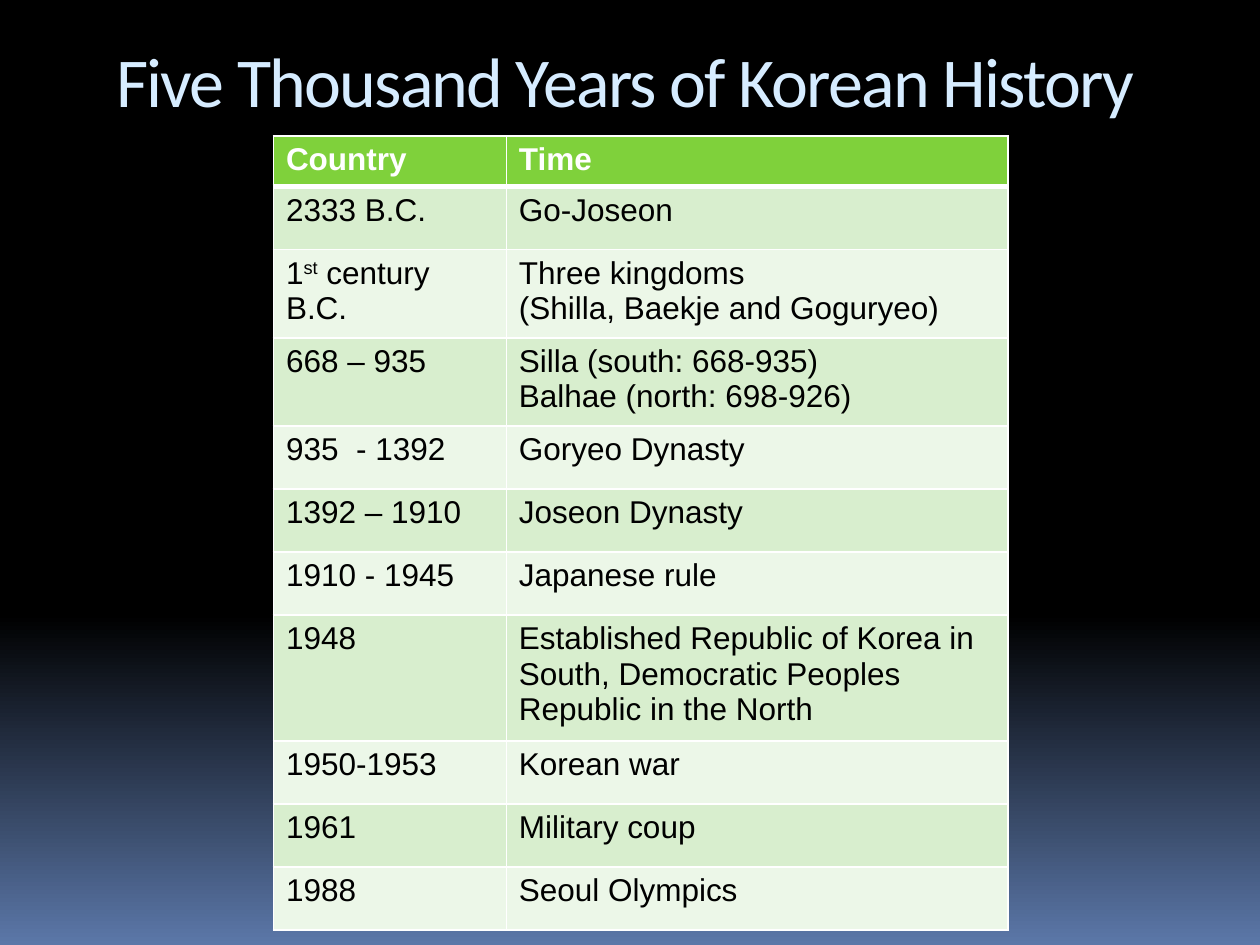
import dataclasses

import lxml.etree
import pptx
import pptx.dml.color
import pptx.enum.text
import pptx.oxml.ns
import pptx.util


@dataclasses.dataclass(frozen=True)
class Theme:
    sky_top: str = "000000"
    sky_bottom: str = "5B77A8"
    title: str = "D6ECFF"
    header: str = "7FD13B"
    bands: tuple = ("D8EECE", "ECF7E8")
    line: str = "FFFFFF"
    header_text: str = "FFFFFF"
    body_text: str = "000000"
    title_font: str = "Calibri"
    table_font: str = "Arial"
    title_size: int = 40
    table_size: int = 18
    thin: int = 1
    thick: int = 3


THEME = Theme()
WIDTH, HEIGHT = 10, 7.5
TITLE_BOX = (0.42, 0.25, 9.08, 1)
TABLE_BOX = (2.17, 1.08, 5.83, 6.24)
COLUMN_SHARES = (0.317, 0.683)
HEADER_HEIGHT = 0.4
ROW_HEIGHTS = {1: 0.5, 2: 0.68, 3: 0.98}  # by number of text lines

# Each row: its number of text lines, then its cells.
# A cell is a list of paragraphs, a paragraph a list of runs; "^" marks superscript.
HEADER = ([["Country"]], [["Time"]])
PERIODS = [
    (1, [["2333 B.C."]], [["Go-Joseon"]]),
    (2, [["1", "^st", " century B.C."]],
     [["Three kingdoms"], ["(Shilla, Baekje and Goguryeo)"]]),
    (2, [["668 – 935"]], [["Silla (south: 668-935)"], ["Balhae (north: 698-926)"]]),
    (1, [["935  - 1392"]], [["Goryeo Dynasty"]]),
    (1, [["1392 – 1910"]], [["Joseon Dynasty"]]),
    (1, [["1910 - 1945"]], [["Japanese rule"]]),
    (3, [["1948"]], [["Established Republic of Korea in South, "
                      "Democratic Peoples Republic in the North"]]),
    (1, [["1950-1953"]], [["Korean war"]]),
    (1, [["1961"]], [["Military coup"]]),
    (1, [["1988"]], [["Seoul Olympics"]]),
]


def rgb(value):
    return pptx.dml.color.RGBColor.from_string(value)


def add_run(p, text, font, size, color, bold=False):
    r = p.add_run()
    r.text = text.removeprefix("^")
    r.font.name = font
    r.font.size = pptx.util.Pt(size)
    r.font.bold = bold
    r.font.color.rgb = rgb(color)
    if text.startswith("^"):
        r._r.get_or_add_rPr().set("baseline", "30000")
    return r


def paint_background(s):
    fill = s.background.fill
    fill.gradient()
    fill.gradient_angle = 270
    stops = ((0.65, THEME.sky_top), (1, THEME.sky_bottom))
    for stop, (position, color) in zip(fill.gradient_stops, stops):
        stop.position = position
        stop.color.rgb = rgb(color)


def add_title(s, box, text):
    tf = s.shapes.add_textbox(*map(pptx.util.Inches, box)).text_frame
    tf.word_wrap = True
    tf.vertical_anchor = pptx.enum.text.MSO_ANCHOR.TOP
    p = tf.paragraphs[0]
    p.alignment = pptx.enum.text.PP_ALIGN.CENTER
    r = add_run(p, text, THEME.title_font, THEME.title_size, THEME.title)
    r._r.get_or_add_rPr().set("spc", "-100")


def set_borders(cell, top, bottom):
    """Draw all four cell edges; top and bottom are widths in points."""
    qn = pptx.oxml.ns.qn
    tc_pr = cell._tc.get_or_add_tcPr()
    widths = {"L": THEME.thin, "R": THEME.thin, "T": top, "B": bottom}
    for i, (side, width) in enumerate(widths.items()):
        ln = lxml.etree.Element(qn(f"a:ln{side}"), w=str(pptx.util.Pt(width)))
        fill = lxml.etree.SubElement(ln, qn("a:solidFill"))
        lxml.etree.SubElement(fill, qn("a:srgbClr"), val=THEME.line)
        tc_pr.insert(i, ln)


def fill_cell(cell, paragraphs, fill, color, bold):
    cell.fill.solid()
    cell.fill.fore_color.rgb = rgb(fill)
    tf = cell.text_frame
    for i, runs in enumerate(paragraphs):
        p = tf.add_paragraph() if i else tf.paragraphs[0]
        for text in runs:
            add_run(p, text, THEME.table_font, THEME.table_size, color, bold)


def add_timeline(s, box, header, periods):
    rows = [header] + [cells for _, *cells in periods]
    heights = [HEADER_HEIGHT] + [ROW_HEIGHTS[lines] for lines, *_ in periods]
    table = s.shapes.add_table(
        len(rows), len(header), *map(pptx.util.Inches, box)).table
    for column, share in zip(table.columns, COLUMN_SHARES):
        column.width = pptx.util.Inches(box[2] * share)
    for i, (cells, height) in enumerate(zip(rows, heights)):
        table.rows[i].height = pptx.util.Inches(height)
        is_header = i == 0
        fill = THEME.header if is_header else THEME.bands[(i - 1) % 2]
        color = THEME.header_text if is_header else THEME.body_text
        for j, paragraphs in enumerate(cells):
            cell = table.cell(i, j)
            fill_cell(cell, paragraphs, fill, color, is_header)
            set_borders(cell,
                        top=THEME.thick if i == 1 else THEME.thin,
                        bottom=THEME.thick if is_header else THEME.thin)


def main():
    prs = pptx.Presentation()
    prs.slide_width = pptx.util.Inches(WIDTH)
    prs.slide_height = pptx.util.Inches(HEIGHT)
    s = prs.slides.add_slide(prs.slide_layouts[6])
    paint_background(s)
    add_title(s, TITLE_BOX, "Five Thousand Years of Korean History")
    add_timeline(s, TABLE_BOX, HEADER, PERIODS)
    prs.save("out.pptx")


if __name__ == "__main__":
    main()
